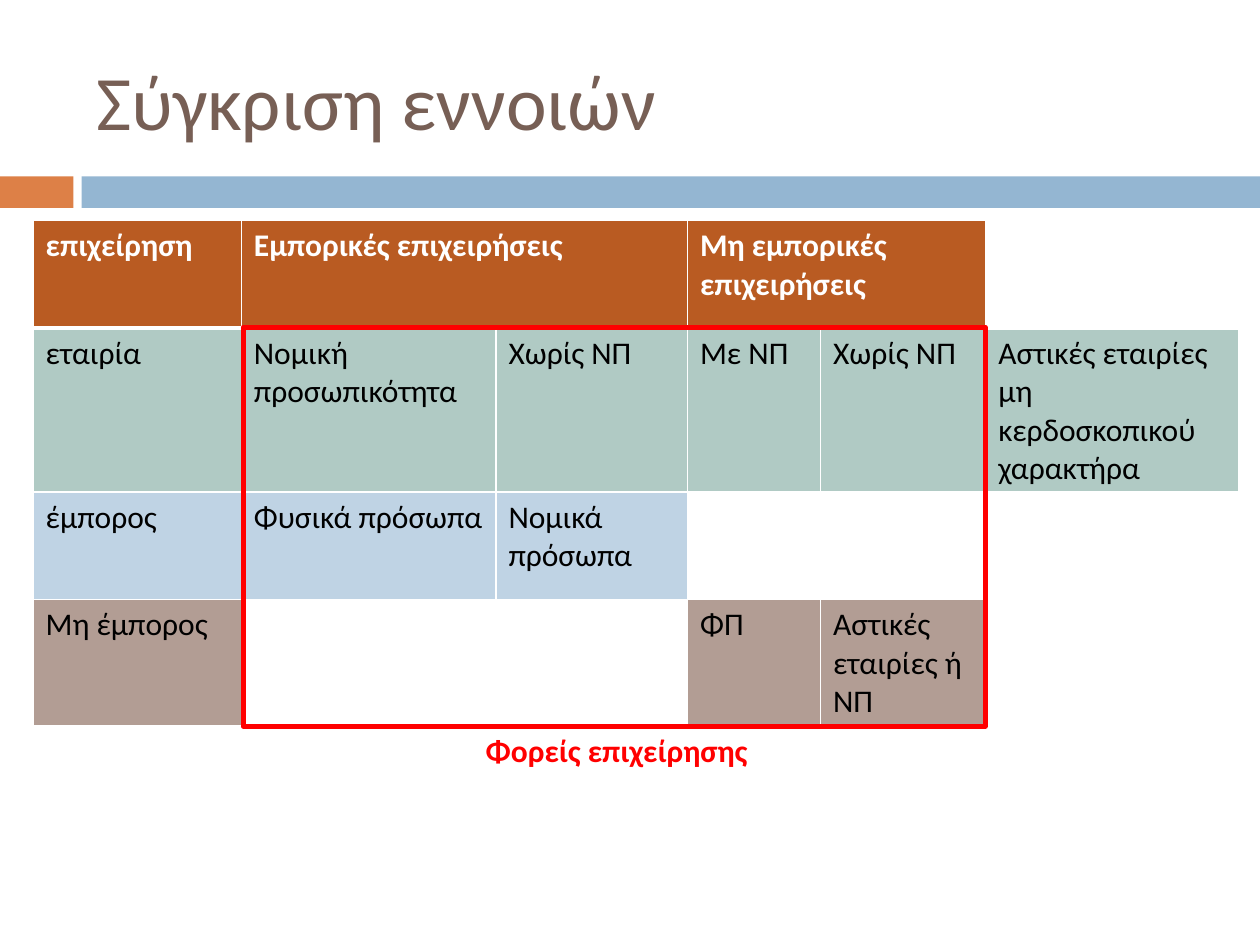
import pptx
import pptx.dml.color
import pptx.enum.shapes
import pptx.enum.text
import pptx.oxml
import pptx.oxml.ns
import pptx.util
from pptx.util import Pt

WHITE, BLACK, RED = "FFFFFF", "000000", "FF0000"
HEADER, COMPANY, MERCHANT, NON_MERCHANT = "B95B22", "B0CAC4", "BFD3E4", "B29D94"

COLUMN_WIDTHS = [119, 145.5, 109.5, 76, 94.5, 144.5]
ROW_HEIGHT = 61.5
# Row colour and its cell texts; None marks an unfilled cell.
ROWS = [
    (HEADER, ["επιχείρηση", "Εμπορικές επιχειρήσεις", None,
              "Μη εμπορικές επιχειρήσεις", None, None]),
    (COMPANY, ["εταιρία", "Νομική προσωπικότητα", "Χωρίς ΝΠ", "Με ΝΠ", "Χωρίς ΝΠ",
               "Αστικές εταιρίες μη κερδοσκοπικού χαρακτήρα"]),
    (MERCHANT, ["έμπορος", "Φυσικά πρόσωπα", "Νομικά πρόσωπα", None, None, None]),
    (NON_MERCHANT, ["Μη έμπορος", None, None, "ΦΠ", "Αστικές εταιρίες ή ΝΠ", None]),
]
HEADER_SPANS = [(1, 2), (3, 4)]


def color(value):
    return pptx.dml.color.RGBColor.from_string(value)


class SlideBuilder:
    font_name = "Calibri"

    def __init__(self, slide):
        self.slide = slide

    def style(self, paragraph, size, text_color, bold=False):
        font = paragraph.font
        font.name, font.size, font.bold = self.font_name, Pt(size), bold
        font.color.rgb = color(text_color)

    def text(self, wording, left, top, width, height, size, text_color, bold=False,
             anchor=pptx.enum.text.MSO_ANCHOR.TOP):
        frame = self.slide.shapes.add_textbox(
            Pt(left), Pt(top), Pt(width), Pt(height)).text_frame
        frame.word_wrap = True
        frame.vertical_anchor = anchor
        frame.text = wording
        self.style(frame.paragraphs[0], size, text_color, bold)

    def rectangle(self, left, top, width, height, fill=None, line=None, line_width=3):
        shape = self.slide.shapes.add_shape(
            pptx.enum.shapes.MSO_SHAPE.RECTANGLE, Pt(left), Pt(top), Pt(width), Pt(height))
        shape.shadow.inherit = False
        if fill:
            shape.fill.solid()
            shape.fill.fore_color.rgb = color(fill)
        else:
            shape.fill.background()
        if line:
            shape.line.color.rgb = color(line)
            shape.line.width = Pt(line_width)
        else:
            shape.line.fill.background()

    def borders(self, cell, top, bottom):
        """Draw white cell borders; top and bottom are widths in points."""
        properties = cell._tc.get_or_add_tcPr()
        sides = [("lnL", 1), ("lnR", 1), ("lnT", top), ("lnB", bottom)]
        for position, (side, width) in enumerate(sides):
            properties.insert(position, pptx.oxml.parse_xml(
                f'<a:{side} {pptx.oxml.ns.nsdecls("a")} w="{Pt(width)}"><a:solidFill>'
                f'<a:srgbClr val="{WHITE}"/></a:solidFill></a:{side}>'))

    def table(self, left, top, widths, row_height, rows, header_spans):
        table = self.slide.shapes.add_table(
            len(rows), len(widths), Pt(left), Pt(top),
            Pt(sum(widths)), Pt(row_height * len(rows))).table
        table.first_row = table.horz_banding = False
        for column, width in zip(table.columns, widths):
            column.width = Pt(width)
        for row_index, (row_fill, wordings) in enumerate(rows):
            is_header = row_index == 0
            table.rows[row_index].height = Pt(row_height)
            for column_index, wording in enumerate(wordings):
                cell = table.cell(row_index, column_index)
                if wording is None:
                    cell.fill.background()
                else:
                    cell.fill.solid()
                    cell.fill.fore_color.rgb = color(row_fill)
                    cell.text = wording
                    self.style(cell.text_frame.paragraphs[0], 18,
                               WHITE if is_header else BLACK, is_header)
                self.borders(cell, 3 if row_index == 1 else 1, 3 if is_header else 1)
        for first, last in header_spans:
            table.cell(0, first).merge(table.cell(0, last))


def main():
    presentation = pptx.Presentation()
    presentation.slide_width, presentation.slide_height = Pt(720), Pt(540)
    builder = SlideBuilder(presentation.slides.add_slide(presentation.slide_layouts[6]))

    builder.rectangle(0, 100.8, 42, 18, fill="DD8047")
    builder.rectangle(46.6, 100.8, 673.4, 18, fill="94B6D2")
    builder.text("Σύγκριση εννοιών", 48, 18, 642, 78, 44, "775F55",
                 anchor=pptx.enum.text.MSO_ANCHOR.MIDDLE)
    builder.table(18.9, 126, COLUMN_WIDTHS, ROW_HEIGHT, ROWS, HEADER_SPANS)
    builder.rectangle(139, 187, 424, 228, line=RED)
    builder.text("Φορείς επιχείρησης", 270.5, 414, 183, 29, 18, RED, bold=True)

    presentation.save("out.pptx")


if __name__ == "__main__":
    main()
